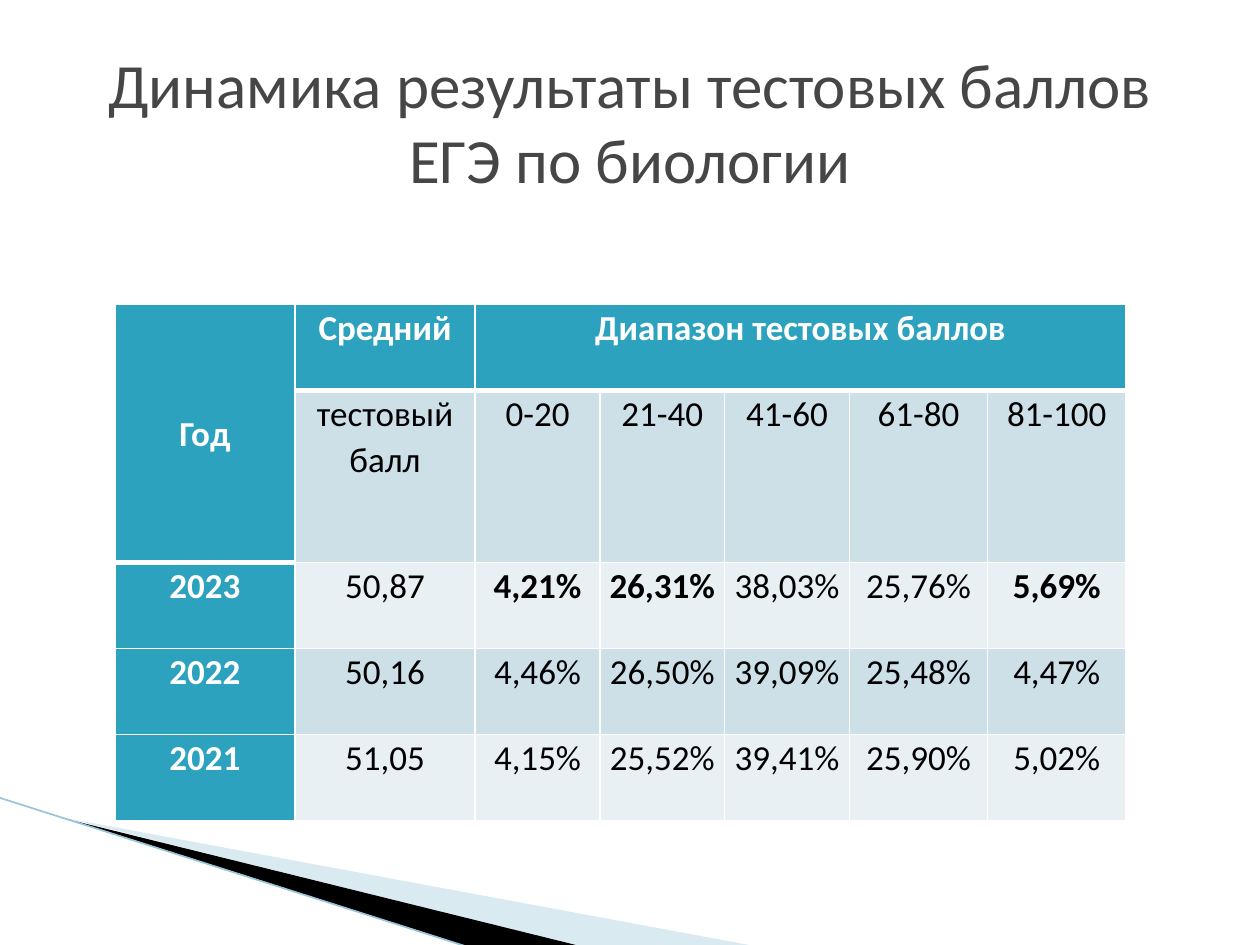
"""Build a slide with a table of biology exam score trends by year."""
from lxml.etree import SubElement
from pptx import Presentation
from pptx.dml.color import RGBColor
from pptx.enum.shapes import MSO_CONNECTOR as Connector
from pptx.enum.text import MSO_ANCHOR as Anchor, PP_ALIGN as Align
from pptx.oxml.ns import qn
from pptx.util import Pt

COLORS = {
    "title": "464646", "header": "2DA2BF", "dark_band": "CDE0E8",
    "light_band": "E8F0F4", "text": "000000", "white": "FFFFFF",
    "pale_wedge": "A0CBDC", "black_wedge": "000000", "edge": "97C5D8",
}
FONT = "Calibri"


def color(name):
    return RGBColor.from_string(COLORS[name])


def add_border(cell, side, width):
    border = SubElement(cell._tc.get_or_add_tcPr(), qn(f"a:ln{side}"), w=str(Pt(width)))
    fill = SubElement(border, qn("a:solidFill"))
    SubElement(fill, qn("a:srgbClr"), val=COLORS["white"])


prs = Presentation()
prs.slide_width, prs.slide_height = Pt(720), Pt(540)
slide = prs.slides.add_slide(prs.slide_layouts[6])
shapes = slide.shapes

wedges = [
    ("pale_wedge", 40, [(39.6, 468.5), (428.4, 540.5), (328.3, 540.5), (39.6, 468)]),
    ("black_wedge", 100, [(38.2, 467.5), (329, 540.5), (268, 541), (39, 468)]),
]
for name, opacity, corners in wedges:
    outline = shapes.build_freeform(*corners[0], scale=Pt(1))
    outline.add_line_segments(corners[1:], close=True)
    wedge = outline.convert_to_shape()
    wedge.shadow.inherit = False
    wedge.fill.solid()
    wedge.fill.fore_color.rgb = color(name)
    wedge.line.fill.background()
    if opacity < 100:
        tint = wedge._element.spPr.find(f"{qn('a:solidFill')}/{qn('a:srgbClr')}")
        SubElement(tint, qn("a:alpha"), val=str(opacity * 1000))

edge = shapes.add_connector(Connector.STRAIGHT, Pt(-0.5), Pt(455.8), Pt(267), Pt(541))
edge.line.color.rgb = color("edge")
edge.line.width = Pt(0.95)
SubElement(edge._element.spPr, qn("a:effectLst"))

scores = [
    ["Год", "Средний", "Диапазон тестовых баллов", "", "", "", ""],
    ["", "тестовый балл", "0-20", "21-40", "41-60", "61-80", "81-100"],
    ["2023", "50,87", "4,21%", "26,31%", "38,03%", "25,76%", "5,69%"],
    ["2022", "50,16", "4,46%", "26,50%", "39,09%", "25,48%", "4,47%"],
    ["2021", "51,05", "4,15%", "25,52%", "39,41%", "25,90%", "5,02%"],
]
highlighted = {(2, 2), (2, 3), (2, 6)}
widths = [103, 103, 71.3, 71.3, 71.3, 79, 79]
heights = [49.2, 98.4, 49.2, 49.2, 49.2]

table = shapes.add_table(
    len(heights), len(widths), Pt(65.6), Pt(173.8), Pt(sum(widths)), Pt(sum(heights))
).table
for column, width in zip(table.columns, widths):
    column.width = Pt(width)
for row, height in zip(table.rows, heights):
    row.height = Pt(height)
table.cell(0, 0).merge(table.cell(1, 0))
table.cell(0, 2).merge(table.cell(0, 6))

for r, values in enumerate(scores):
    for c, value in enumerate(values):
        cell = table.cell(r, c)
        is_header = r == 0 or c == 0
        header_rows = 1 if c else 2
        add_border(cell, "L", 1)
        add_border(cell, "R", 1)
        add_border(cell, "T", 3 if r == header_rows else 1)
        add_border(cell, "B", 3 if r < header_rows else 1)
        cell.fill.solid()
        band = "dark_band" if r % 2 else "light_band"
        cell.fill.fore_color.rgb = color("header" if is_header else band)
        cell.margin_left = cell.margin_right = Pt(5)
        cell.margin_top = cell.margin_bottom = 0
        cell.vertical_anchor = Anchor.MIDDLE if r == c == 0 else Anchor.TOP
        if value:
            cell.text = value
            paragraph = cell.text_frame.paragraphs[0]
            paragraph.alignment = Align.CENTER
            paragraph.line_spacing = 1.07
            paragraph.font.name = FONT
            paragraph.font.size = Pt(20)
            paragraph.font.bold = is_header or (r, c) in highlighted
            paragraph.font.color.rgb = color("white" if is_header else "text")

title = shapes.add_textbox(Pt(36), Pt(24), Pt(648), Pt(90)).text_frame
title.word_wrap = True
title.vertical_anchor = Anchor.MIDDLE
title.text = "Динамика результаты тестовых баллов ЕГЭ по биологии"
heading = title.paragraphs[0]
heading.alignment = Align.CENTER
heading.font.name = FONT
heading.font.size = Pt(36)
heading.font.color.rgb = color("title")

prs.save("out.pptx")
